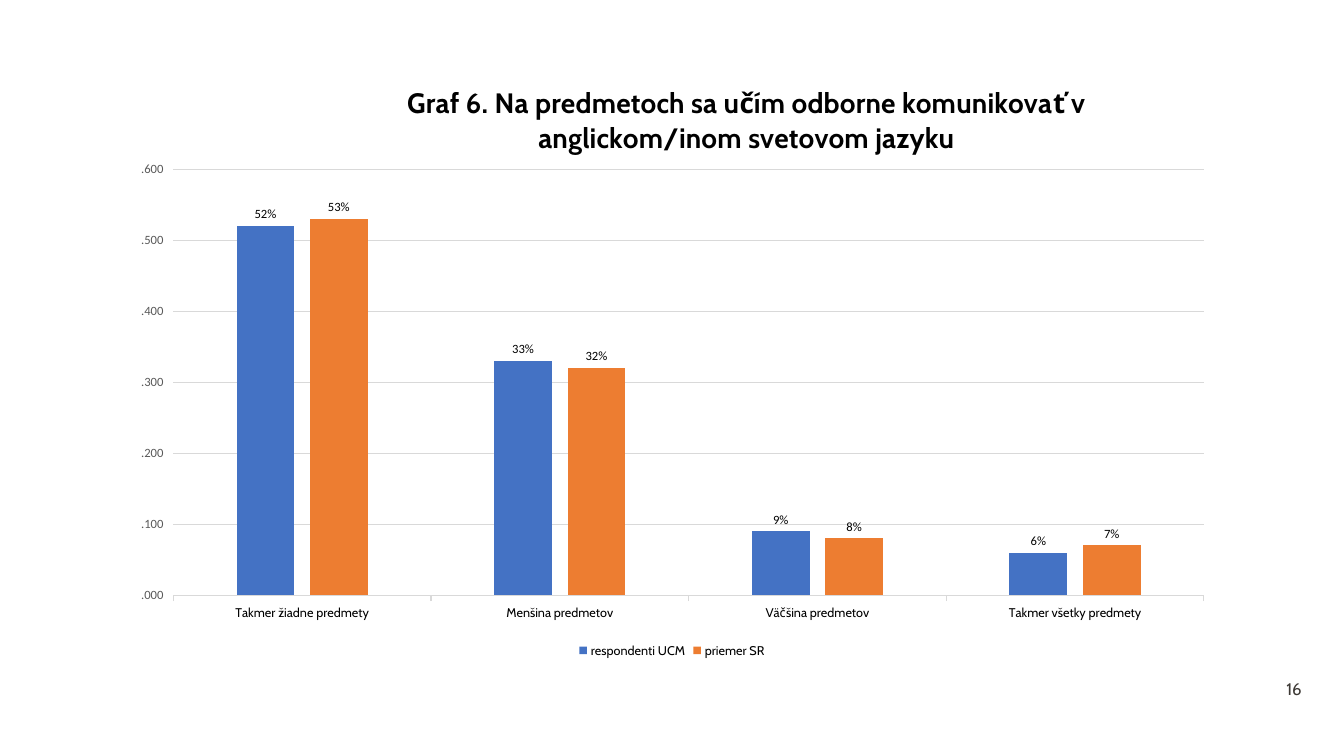
from lxml import etree
from pptx import Presentation
from pptx.chart.data import CategoryChartData
from pptx.dml.color import RGBColor
from pptx.enum.chart import XL_CHART_TYPE as ChartType
from pptx.enum.chart import XL_LABEL_POSITION as LabelPosition
from pptx.enum.chart import XL_LEGEND_POSITION as LegendPosition
from pptx.enum.chart import XL_TICK_MARK as TickMark
from pptx.enum.text import MSO_ANCHOR, PP_ALIGN
from pptx.oxml.ns import qn
from pptx.util import Inches, Pt

TITLE = "Graf 6. Na predmetoch sa učím odborne komunikovať v anglickom/inom svetovom jazyku"
CATEGORIES = ["Takmer žiadne predmety", "Menšina predmetov",
              "Väčšina predmetov", "Takmer všetky predmety"]
BLUE = RGBColor(0x44, 0x72, 0xC4)
ORANGE = RGBColor(0xED, 0x7D, 0x31)
SERIES = [("respondenti UCM", [0.52, 0.33, 0.09, 0.06], BLUE),
          ("priemer SR", [0.53, 0.32, 0.08, 0.07], ORANGE)]
PAGE_NUMBER = "16"

BLACK = RGBColor(0, 0, 0)
GREY = RGBColor(0x59, 0x59, 0x59)
LIGHT_GREY = RGBColor(0xD9, 0xD9, 0xD9)
DARK = RGBColor(0x3D, 0x39, 0x35)


def style_font(font, size, name, color=BLACK, bold=False):
    font.size, font.name, font.bold = Pt(size), name, bold
    font.color.rgb = color


def style_line(line):
    line.color.rgb = LIGHT_GREY
    line.width = Pt(0.75)


def place(element, after, **places):
    """Give a chart part a manual layout, in fractions of the chart."""
    for old in element.findall(qn("c:layout")):
        element.remove(old)
    layout = etree.Element(qn("c:layout"))
    manual = etree.SubElement(layout, qn("c:manualLayout"))
    if "w" in places:
        etree.SubElement(manual, qn("c:layoutTarget")).set("val", "inner")
    for mode in ("xMode", "yMode"):
        etree.SubElement(manual, qn(f"c:{mode}")).set("val", "edge")
    for key, value in places.items():
        etree.SubElement(manual, qn(f"c:{key}")).set("val", str(value))
    position = 0 if after is None else element.index(element.find(qn(after))) + 1
    element.insert(position, layout)


def add_bar_chart(page):
    data = CategoryChartData(number_format="0%")
    data.categories = CATEGORIES
    for name, values, _ in SERIES:
        data.add_series(name, values)
    chart = page.shapes.add_chart(
        ChartType.COLUMN_CLUSTERED, Inches(1.17), Inches(0.53),
        Inches(10.99), Inches(6.04), data).chart
    style_font(chart.font, 10, "Calibri")

    chart.has_title = True
    title = chart.chart_title
    title.text_frame.text = TITLE
    style_font(title.text_frame.paragraphs[0].runs[0].font, 20, "Cabin", bold=True)
    title.include_in_layout = False
    place(title._element, "c:tx", x=0.19, y=0.04)

    chart.has_legend = True
    chart.legend.position = LegendPosition.BOTTOM
    chart.legend.include_in_layout = False
    style_font(chart.legend.font, 9, "Cabin")

    plot = chart.plots[0]
    plot.gap_width, plot.overlap = 219, -27
    plot.vary_by_categories = False
    for series, (_, _, color) in zip(plot.series, SERIES):
        series.format.fill.solid()
        series.format.fill.fore_color.rgb = color
        labels = series.data_labels
        labels.show_value = True
        labels.position = LabelPosition.OUTSIDE_END
        labels.number_format, labels.number_format_is_linked = "0%", False
        style_font(labels.font, 9, "Calibri")

    category_axis, value_axis = chart.category_axis, chart.value_axis
    category_axis.major_tick_mark = TickMark.OUTSIDE
    style_font(category_axis.tick_labels.font, 9, "Cabin")
    style_line(category_axis.format.line)

    value_axis.minimum_scale, value_axis.maximum_scale = 0, 0.6
    value_axis.major_unit = 0.1
    value_axis.major_tick_mark = TickMark.OUTSIDE
    value_axis.format.line.fill.background()
    style_line(value_axis.major_gridlines.format.line)
    ticks = value_axis.tick_labels
    ticks.number_format, ticks.number_format_is_linked = "#.000", False
    style_font(ticks.font, 9, "Calibri", GREY)

    plot_area = chart._chartSpace.find(".//" + qn("c:plotArea"))
    place(plot_area, None, x=0.05, y=0.19, w=0.93, h=0.7)


def add_page_number(page):
    box = page.shapes.add_textbox(Inches(12.25), Inches(6.67), Inches(0.76), Inches(0.32))
    frame = box.text_frame
    frame.word_wrap = True
    frame.vertical_anchor = MSO_ANCHOR.MIDDLE
    frame.text = PAGE_NUMBER
    para = frame.paragraphs[0]
    para.alignment = PP_ALIGN.RIGHT
    style_font(para.runs[0].font, 12, "Cabin", DARK)


def main():
    deck = Presentation()
    deck.slide_width, deck.slide_height = Inches(13.33), Inches(7.5)
    page = deck.slides.add_slide(deck.slide_layouts[6])
    add_bar_chart(page)
    add_page_number(page)
    deck.save("out.pptx")


if __name__ == "__main__":
    main()
